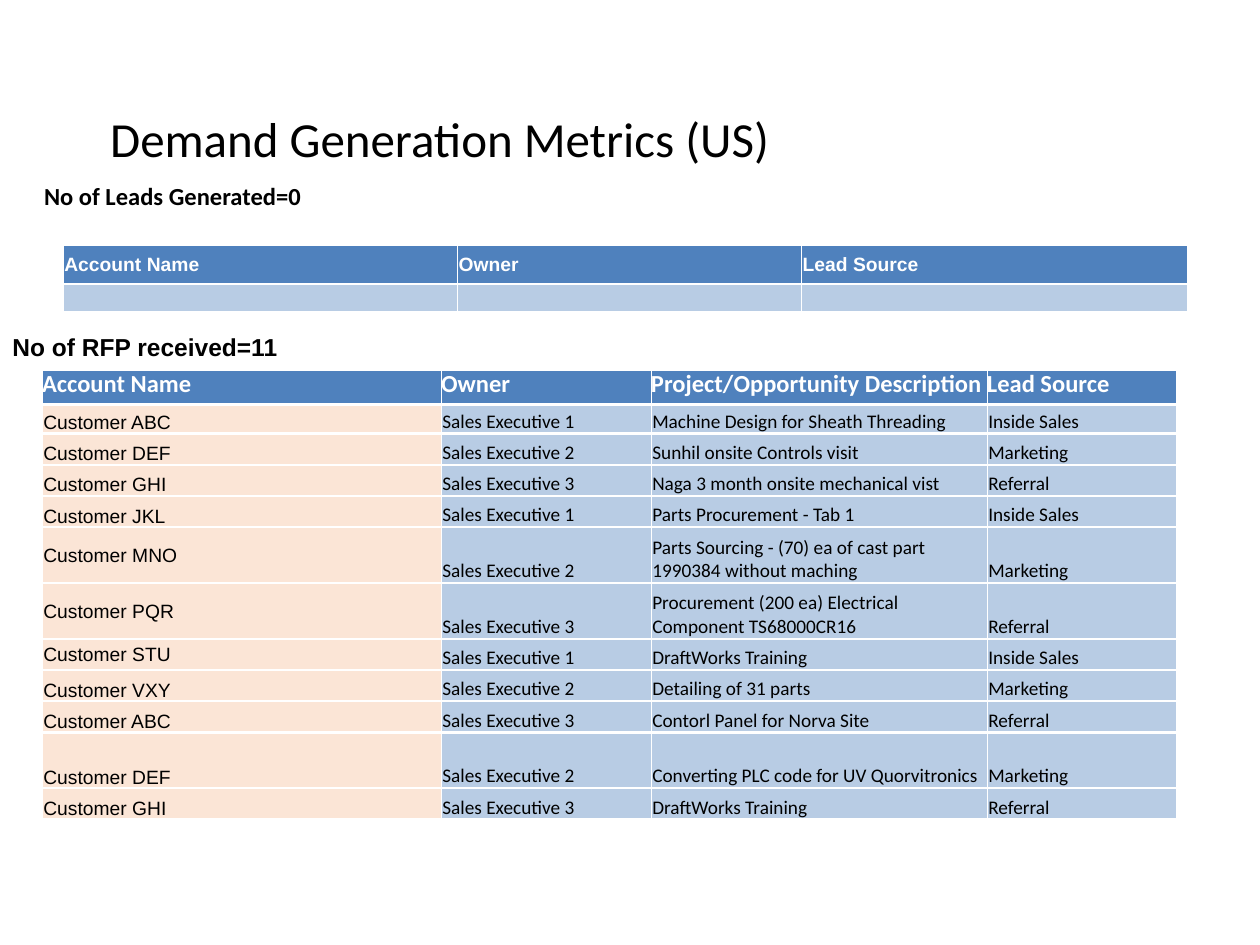
from lxml.etree import SubElement
from pptx import Presentation
from pptx.dml.color import RGBColor
from pptx.enum.text import MSO_ANCHOR, MSO_AUTO_SIZE, PP_ALIGN
from pptx.oxml.ns import qn
from pptx.util import Pt

HUES = {"black": "000000", "white": "FFFFFF", "head": "4F81BD",
        "blue": "B8CCE4", "peach": "FBE5D6"}
EDGES = {"a:lnL": 0.5, "a:lnR": 0.5, "a:lnT": 1.5, "a:lnB": 1.5}

LEADS = [["Account Name", "Owner", "Lead Source"], ["", "", ""]]
RFPS = [
    ["Account Name", "Owner", "Project/Opportunity Description", "Lead Source"],
    ["Customer ABC", "Sales Executive 1", "Machine Design for Sheath Threading", "Inside Sales"],
    ["Customer DEF", "Sales Executive 2", "Sunhil onsite Controls visit", "Marketing"],
    ["Customer GHI", "Sales Executive 3", "Naga 3 month onsite mechanical vist", "Referral"],
    ["Customer JKL", "Sales Executive 1", "Parts Procurement - Tab 1", "Inside Sales"],
    ["Customer MNO", "Sales Executive 2",
     "Parts Sourcing - (70) ea of cast part 1990384 without maching", "Marketing"],
    ["Customer PQR", "Sales Executive 3",
     "Procurement (200 ea) Electrical Component TS68000CR16", "Referral"],
    ["Customer STU", "Sales Executive 1", "DraftWorks Training", "Inside Sales"],
    ["Customer VXY", "Sales Executive 2", "Detailing of 31 parts", "Marketing"],
    ["Customer ABC", "Sales Executive 3", "Contorl Panel for Norva Site", "Referral"],
    ["Customer DEF", "Sales Executive 2", "Converting PLC code for UV Quorvitronics", "Marketing"],
    ["Customer GHI", "Sales Executive 3", "DraftWorks Training", "Referral"],
]
CENTRED = {"Customer MNO", "Customer PQR", "Customer STU"}


class Deck:
    def __init__(self):
        self.file = Presentation()
        self.file.slide_width, self.file.slide_height = Pt(720), Pt(540)
        self.slide = self.file.slides.add_slide(self.file.slide_layouts[1])

    def style(self, para, size, face, hue="black", bold=False):
        font = para.font
        font.size, font.name, font.bold = Pt(size), face, bold
        font.color.rgb = RGBColor.from_string(HUES[hue])

    def place(self, shape, box):
        shape.left, shape.top, shape.width, shape.height = map(Pt, box)

    def holder(self, index, text, box, size, bold=False, inset=7.2):
        shape = self.slide.placeholders[index]
        self.place(shape, box)
        frame = shape.text_frame
        frame.text = text
        frame.auto_size = MSO_AUTO_SIZE.NONE
        frame.margin_left = Pt(inset)
        para = frame.paragraphs[0]
        para.alignment = PP_ALIGN.LEFT
        para.line_spacing, para.space_before = 0.9, Pt(0)
        props = para._p.get_or_add_pPr()
        props.set("marL", "0")
        props.set("indent", "0")
        SubElement(props, qn("a:buNone"))
        self.style(para, size, "Calibri", bold=bold)

    def label(self, text, box):
        frame = self.slide.shapes.add_textbox(*map(Pt, box)).text_frame
        frame.word_wrap = True
        frame.text = text
        self.style(frame.paragraphs[0], 14, "Arial", bold=True)

    def cell(self, cell, text, fill, font, anchor, inset=0.75):
        cell.text = text
        cell.vertical_anchor = anchor
        cell.margin_left = cell.margin_right = cell.margin_top = Pt(inset)
        cell.margin_bottom = Pt(0)
        para = cell.text_frame.paragraphs[0]
        self.style(para, *font)
        if not text:
            SubElement(para._p, qn("a:endParaRPr"), sz=str(font[0] * 100))
        props = cell._tc.get_or_add_tcPr()
        for tag, width in EDGES.items():
            line = SubElement(props, qn(tag), w=str(Pt(width)))
            paint = SubElement(line, qn("a:solidFill"))
            SubElement(paint, qn("a:srgbClr"), val=HUES["white"])
        cell.fill.solid()
        cell.fill.fore_color.rgb = RGBColor.from_string(HUES[fill])

    def table(self, data, spot, cols, rows, look):
        box = (*spot, sum(cols), sum(rows))
        table = self.slide.shapes.add_table(len(rows), len(cols), *map(Pt, box)).table
        for col, width in zip(table.columns, cols):
            col.width = Pt(width)
        for row, height in zip(table.rows, rows):
            row.height = Pt(height)
        for r, line in enumerate(data):
            for c, text in enumerate(line):
                self.cell(table.cell(r, c), text, *look(r, c, text))


def lead_look(row, col, text):
    fill = "blue" if row else "head"
    return fill, (11, "Arial", "white", True), MSO_ANCHOR.MIDDLE


def rfp_look(row, col, text):
    if row == 0:
        return "head", (14, "Calibri", "white", True), MSO_ANCHOR.TOP, 0
    anchor = MSO_ANCHOR.MIDDLE if text in CENTRED else MSO_ANCHOR.BOTTOM
    if col == 0:
        return "peach", (11, "Arial"), anchor
    return "blue", (11, "Calibri"), anchor


def main():
    deck = Deck()
    deck.holder(0, "Demand Generation Metrics (US)", (49.5, 28.8, 621, 104.4), 28, inset=13.5)
    deck.holder(1, "No of Leads Generated=0", (18, 102, 624, 24), 14, bold=True)
    deck.table(LEADS, (36, 139.8), (225.4, 196.6, 220.3), (22.4, 16.4), lead_look)
    deck.label("No of RFP received=11", (0, 186, 624, 18))
    short, tall = 17.85, 31.9
    rows = [20, 16.6] + [short] * 3 + [tall] * 2 + [short] * 3 + [tall, short]
    deck.table(RFPS, (24, 211.2), (228, 120, 192, 108), rows, rfp_look)
    deck.file.save("out.pptx")


if __name__ == "__main__":
    main()
